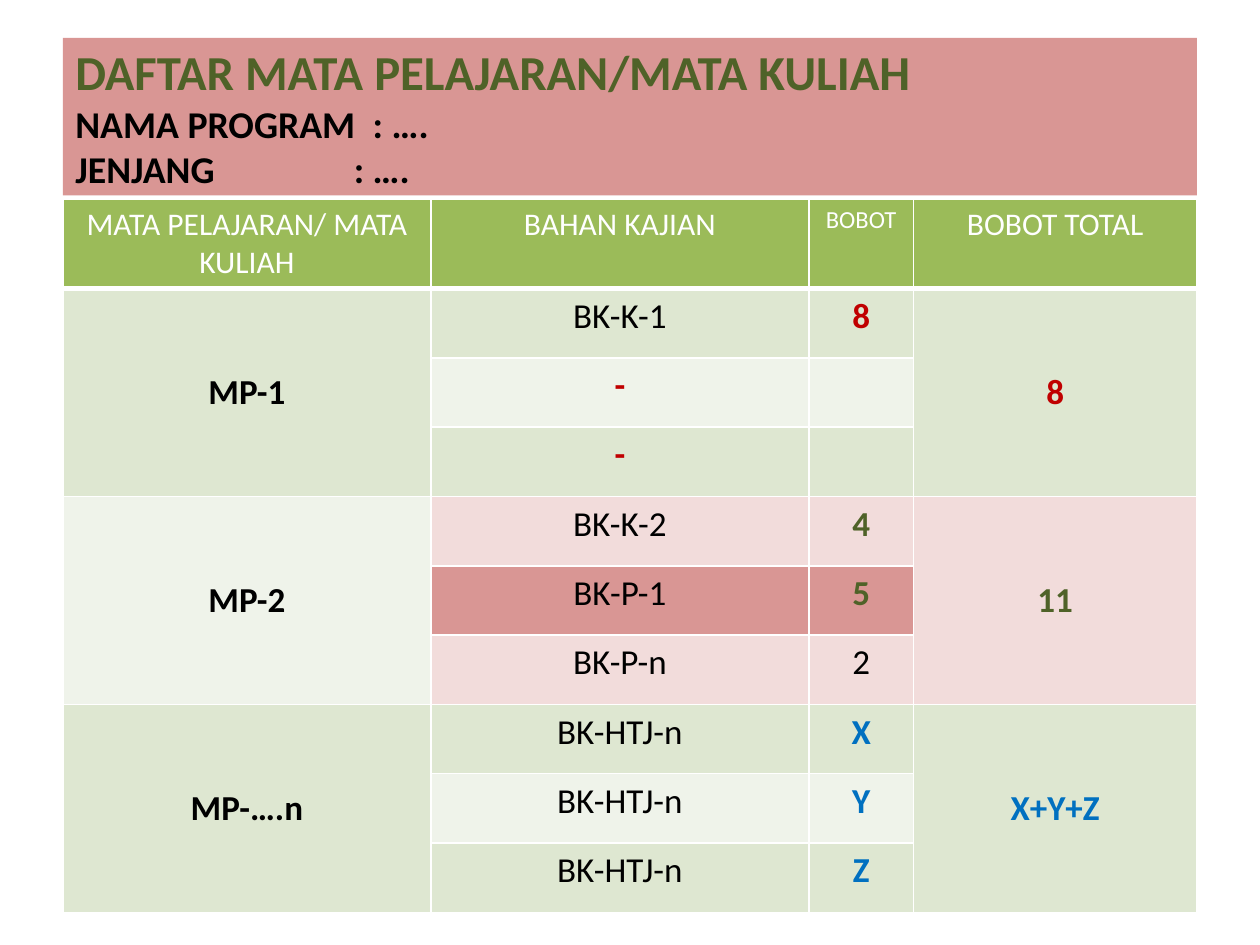
from lxml import etree
from pptx import Presentation
from pptx.dml.color import RGBColor
from pptx.enum.shapes import MSO_SHAPE
from pptx.enum.text import MSO_ANCHOR, PP_ALIGN
from pptx.oxml.ns import qn
from pptx.util import Inches, Pt

RECTANGLE = MSO_SHAPE.RECTANGLE
MIDDLE, TOP = MSO_ANCHOR.MIDDLE, MSO_ANCHOR.TOP
CENTER, LEFT = PP_ALIGN.CENTER, PP_ALIGN.LEFT

FONT = "Calibri"
WHITE, BLACK = "FFFFFF", "000000"
GREEN, SAGE, PALE = "9BBB59", "DEE7D1", "EFF3EA"
ROSE, PINK = "D99694", "F2DCDB"
OLIVE, RED, BLUE = "4F6228", "C00000", "0070C0"

COLUMN_WIDTHS = [2.92, 3, 0.83, 2.25]
HEADER_HEIGHT, ROW_HEIGHT = 0.71, 0.55
HEADERS = [("MATA PELAJARAN/ MATA KULIAH", 18), ("BAHAN KAJIAN", 18),
           ("BOBOT", 14), ("BOBOT TOTAL", 18)]

# Course, its fill, total, total's fill, accent colour,
# then per topic: name, name colour, weight, weight colour, fill
COURSES = [
    ("MP-1", SAGE, "8", SAGE, RED, [
        ("BK-K-1", BLACK, "8", RED, SAGE),
        ("-", RED, "", RED, PALE),
        ("-", RED, "", RED, SAGE)]),
    ("MP-2", PALE, "11", PINK, OLIVE, [
        ("BK-K-2", BLACK, "4", OLIVE, PINK),
        ("BK-P-1", BLACK, "5", OLIVE, ROSE),
        ("BK-P-n", BLACK, "2", BLACK, PINK)]),
    ("MP-….n", SAGE, "X+Y+Z", SAGE, BLUE, [
        ("BK-HTJ-n", BLACK, "X", BLUE, SAGE),
        ("BK-HTJ-n", BLACK, "Y", BLUE, PALE),
        ("BK-HTJ-n", BLACK, "Z", BLUE, SAGE)]),
]


def rgb(color):
    return RGBColor.from_string(color)


def style(paragraph, size, color, bold, align):
    paragraph.alignment = align
    font = paragraph.font
    font.name, font.size, font.bold = FONT, Pt(size), bold
    font.color.rgb = rgb(color)


def set_tab_stop(paragraph, position):
    tabs = etree.Element(qn("a:tabLst"))
    etree.SubElement(tabs, qn("a:tab"), pos=str(Inches(position)), algn="l")
    properties = paragraph._p.get_or_add_pPr()
    defaults = properties.find(qn("a:defRPr"))
    if defaults is None:
        properties.append(tabs)
    else:
        defaults.addprevious(tabs)


def set_borders(cell, bottom=1):
    properties = cell._tc.get_or_add_tcPr()
    for side, width in (("L", 1), ("R", 1), ("T", 1), ("B", bottom)):
        line = etree.SubElement(properties, qn("a:ln" + side), w=str(Pt(width)))
        fill = etree.SubElement(line, qn("a:solidFill"))
        etree.SubElement(fill, qn("a:srgbClr"), val=WHITE)


def fill_cell(cell, text, fill, color, size=20, bold=False, anchor=TOP, bottom=1):
    set_borders(cell, bottom)
    cell.fill.solid()
    cell.fill.fore_color.rgb = rgb(fill)
    cell.vertical_anchor = anchor
    cell.text = text
    style(cell.text_frame.paragraphs[0], size, color, bold, CENTER)


def add_heading(slide, left, top, width, height):
    banner = slide.shapes.add_shape(
        RECTANGLE, Inches(left), Inches(top), Inches(width), Inches(height))
    banner.shadow.inherit = False
    banner.fill.solid()
    banner.fill.fore_color.rgb = rgb(ROSE)
    banner.line.fill.background()
    frame = banner.text_frame
    frame.word_wrap = True
    frame.vertical_anchor = MIDDLE
    frame.text = ("DAFTAR MATA PELAJARAN/MATA KULIAH\n"
                  "NAMA PROGRAM\t: ….\nJENJANG\t: ….")
    title, program, level = frame.paragraphs
    style(title, 27.9, OLIVE, True, LEFT)
    for field, colon_position in ((program, 2.36), (level, 2.21)):
        style(field, 21.6, BLACK, True, LEFT)
        set_tab_stop(field, colon_position)


def add_course_table(slide, left, top, width):
    topic_count = sum(len(course[-1]) for course in COURSES)
    height = HEADER_HEIGHT + topic_count * ROW_HEIGHT
    table = slide.shapes.add_table(
        topic_count + 1, len(HEADERS), Inches(left), Inches(top),
        Inches(width), Inches(height)).table
    table.first_row = table.horz_banding = False
    for column, column_width in zip(table.columns, COLUMN_WIDTHS):
        column.width = Inches(column_width)
    for row in table.rows:
        row.height = Inches(ROW_HEIGHT)
    table.rows[0].height = Inches(HEADER_HEIGHT)

    for column, (label, size) in enumerate(HEADERS):
        fill_cell(table.cell(0, column), label, GREEN, WHITE, size, bottom=3)

    first = 1
    for course, course_fill, total, total_fill, accent, topics in COURSES:
        last = first + len(topics) - 1
        for column, text, fill, color in ((0, course, course_fill, BLACK),
                                          (3, total, total_fill, accent)):
            table.cell(first, column).merge(table.cell(last, column))
            fill_cell(table.cell(first, column), text, fill, color,
                      bold=True, anchor=MIDDLE)
        for row, (topic, topic_color, weight, weight_color, fill) in enumerate(topics, first):
            fill_cell(table.cell(row, 1), topic, fill, topic_color,
                      bold=topic_color != BLACK)
            fill_cell(table.cell(row, 2), weight, fill, weight_color,
                      bold=weight_color != BLACK)
        first = last + 1


def main():
    presentation = Presentation()
    presentation.slide_width, presentation.slide_height = Inches(10), Inches(7.5)
    slide = presentation.slides.add_slide(presentation.slide_layouts[6])
    add_heading(slide, 0.5, 0.3, 9, 1.25)
    add_course_table(slide, 0.5, 1.58, 9)
    presentation.save("out.pptx")


if __name__ == "__main__":
    main()
